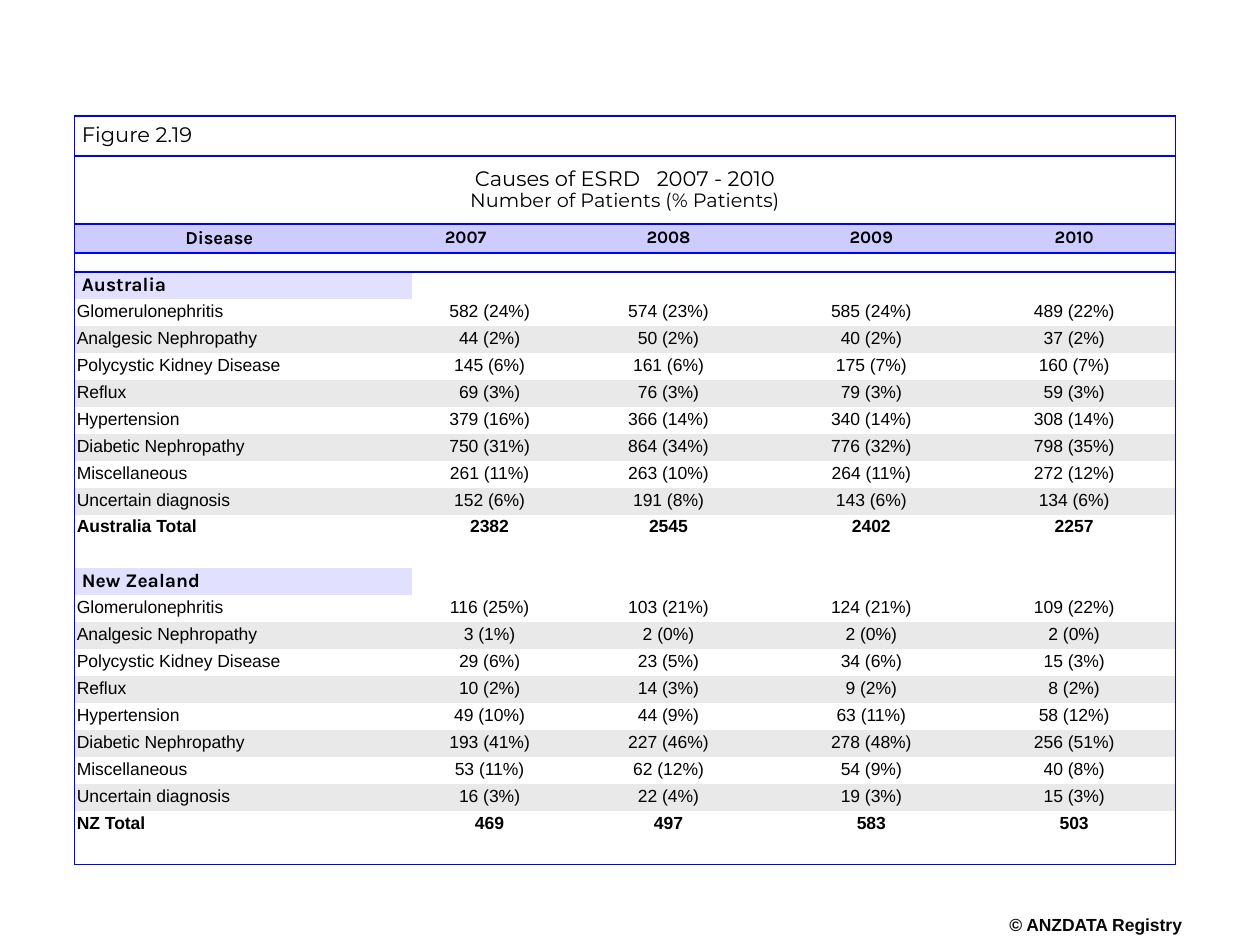
import pptx
import pptx.dml.color
import pptx.enum.text
import pptx.util
from lxml import etree
from pptx.oxml.ns import qn

Inches = pptx.util.Inches
Pt = pptx.util.Pt
ALIGN = pptx.enum.text.PP_ALIGN
ANCHOR = pptx.enum.text.MSO_ANCHOR

COLORS = {
    "border": "0000FF",
    "header": "CCCCFF",
    "country": "E1E1FF",
    "band": "E9E9E9",
    "text": "000000",
    "credit": "080808",
}
NO_STYLE = "{2D5ABB26-0587-4C30-8999-92F81FD0307C}"
COLUMN_WIDTHS = [2.3, 0.38, 1.23, 1.61, 1.61, 1.61]
TOP_HEIGHTS = [0.32, 0.54, 0.23, 0.15]
TABLE_HEIGHT = 5.95
ROW_COUNT = 26
RULED_ROWS = [0, 1, 2]
YEARS = ["2007", "2008", "2009", "2010"]
DISEASES = [
    "Glomerulonephritis", "Analgesic Nephropathy", "Polycystic Kidney Disease",
    "Reflux", "Hypertension", "Diabetic Nephropathy", "Miscellaneous",
    "Uncertain diagnosis",
]
# First table row, country, total label, one line per disease, totals
COUNTRIES = [
    (4, "Australia", "Australia Total", [
        ["582 (24%)", "574 (23%)", "585 (24%)", "489 (22%)"],
        ["44 (2%)", "50 (2%)", "40 (2%)", "37 (2%)"],
        ["145 (6%)", "161 (6%)", "175 (7%)", "160 (7%)"],
        ["69 (3%)", "76 (3%)", "79 (3%)", "59 (3%)"],
        ["379 (16%)", "366 (14%)", "340 (14%)", "308 (14%)"],
        ["750 (31%)", "864 (34%)", "776 (32%)", "798 (35%)"],
        ["261 (11%)", "263 (10%)", "264 (11%)", "272 (12%)"],
        ["152 (6%)", "191 (8%)", "143 (6%)", "134 (6%)"],
        ["2382", "2545", "2402", "2257"],
    ]),
    (15, "New Zealand", "NZ Total", [
        ["116 (25%)", "103 (21%)", "124 (21%)", "109 (22%)"],
        ["3 (1%)", "2 (0%)", "2 (0%)", "2 (0%)"],
        ["29 (6%)", "23 (5%)", "34 (6%)", "15 (3%)"],
        ["10 (2%)", "14 (3%)", "9 (2%)", "8 (2%)"],
        ["49 (10%)", "44 (9%)", "63 (11%)", "58 (12%)"],
        ["193 (41%)", "227 (46%)", "278 (48%)", "256 (51%)"],
        ["53 (11%)", "62 (12%)", "54 (9%)", "40 (8%)"],
        ["16 (3%)", "22 (4%)", "19 (3%)", "15 (3%)"],
        ["469", "497", "583", "503"],
    ]),
]


class SlideBuilder:
    def __init__(self, slide):
        self.slide = slide

    def run(self, paragraph, text, size=10, font="Arial", bold=False, color="text"):
        run = paragraph.add_run()
        run.text = text
        run.font.size = Pt(size)
        run.font.name = font
        run.font.bold = bold
        run.font.color.rgb = pptx.dml.color.RGBColor.from_string(COLORS[color])
        return run

    def format_paragraph(self, paragraph, centered=True):
        paragraph.alignment = ALIGN.CENTER if centered else ALIGN.LEFT
        paragraph.line_spacing = 0.85

    def credit(self, text, left, top, width, height):
        box = self.slide.shapes.add_textbox(
            Inches(left), Inches(top), Inches(width), Inches(height))
        frame = box.text_frame
        frame.margin_left = frame.margin_right = 0
        frame.margin_top = frame.margin_bottom = 0
        frame.word_wrap = False
        self.format_paragraph(frame.paragraphs[0])
        self.run(frame.paragraphs[0], text, bold=True, color="credit")

    def table(self, left, top, widths, heights):
        """Add an unstyled table whose cells are empty and compact."""
        frame = self.slide.shapes.add_table(
            len(heights), len(widths), Inches(left), Inches(top),
            Inches(sum(widths)), Inches(sum(heights)))
        table = frame.table
        table.first_row = table.horz_banding = False
        next(frame.element.iter(qn("a:tableStyleId"))).text = NO_STYLE
        for column, width in zip(table.columns, widths):
            column.width = Inches(width)
        for row, height in zip(table.rows, heights):
            row.height = Inches(height)
        for cell in table.iter_cells():
            cell.margin_left = cell.margin_right = Inches(0.02)
            cell.margin_top = cell.margin_bottom = Inches(0.01)
            cell.vertical_anchor = ANCHOR.MIDDLE
            cell.fill.background()
            paragraph = cell.text_frame.paragraphs[0]
            etree.SubElement(paragraph._p, qn("a:endParaRPr"), sz="600")
        return table

    def cell(self, cell, text, centered=True, fill=None, **style):
        paragraph = cell.text_frame.paragraphs[0]
        self.format_paragraph(paragraph, centered)
        self.run(paragraph, text, **style)
        if fill:
            self.fill(cell, fill)

    def fill(self, cell, color):
        cell.fill.solid()
        cell.fill.fore_color.rgb = pptx.dml.color.RGBColor.from_string(COLORS[color])

    def borders(self, cell, sides):
        """Draw the given sides, listed in the order L, R, T, B."""
        properties = cell._tc.get_or_add_tcPr()
        for index, side in enumerate(sides):
            line = etree.Element(qn(f"a:ln{side}"), w=str(Pt(1)))
            solid = etree.SubElement(line, qn("a:solidFill"))
            etree.SubElement(solid, qn("a:srgbClr"), val=COLORS["border"])
            properties.insert(index, line)


def merge_cells(table):
    last_row = ROW_COUNT - 1
    for row in range(ROW_COUNT):
        if row in (0, 1, 3, 14):
            table.cell(row, 0).merge(table.cell(row, 5))
        elif row == 2:
            table.cell(row, 1).merge(table.cell(row, 2))
        elif row <= last_row:
            table.cell(row, 0).merge(table.cell(row, 1))
    table.cell(4, 2).merge(table.cell(4, 5))


def fill_headings(builder, table):
    figure = table.cell(0, 0)
    figure.margin_left = Inches(0.06)
    builder.cell(figure, "Figure 2.19", centered=False, size=12, font="Montserrat")

    heading = table.cell(1, 0)
    builder.cell(heading, "Causes of ESRD", size=12, font="Montserrat")
    first = heading.text_frame.paragraphs[0]
    gap = builder.run(first, " ", size=12, font="Montserrat")
    gap.font._element.set("spc", "630")
    builder.run(first, "2007 - 2010", size=12, font="Montserrat")
    second = heading.text_frame.add_paragraph()
    builder.format_paragraph(second)
    builder.run(second, "Number of Patients (% Patients)", size=11, font="Montserrat")

    builder.cell(table.cell(2, 0), "Disease", fill="header", size=10.5,
                 font="Karla", bold=True)
    for column, year in zip([1, 3, 4, 5], YEARS):
        builder.cell(table.cell(2, column), year, fill="header",
                     font="Karla", bold=True)


def fill_country(builder, table, first_row, country, total, lines):
    title = table.cell(first_row, 0)
    title.margin_left = Inches(0.06)
    builder.cell(title, country, centered=False, fill="country", size=11,
                 font="Karla", bold=True)
    for index, (label, values) in enumerate(zip(DISEASES + [total], lines)):
        row = first_row + 1 + index
        style = {"fill": "band" if index % 2 else None, "bold": label == total}
        builder.cell(table.cell(row, 0), label, centered=False, **style)
        for column, value in enumerate(values, start=2):
            builder.cell(table.cell(row, column), value, **style)


def draw_borders(builder, table):
    for row in range(ROW_COUNT):
        for column in range(len(COLUMN_WIDTHS)):
            cell = table.cell(row, column)
            end = column + (cell.span_width if cell.is_merge_origin else 1)
            shown = {
                "L": column == 0,
                "R": end == len(COLUMN_WIDTHS),
                "T": row in RULED_ROWS or row - 1 in RULED_ROWS,
                "B": row in RULED_ROWS or row == ROW_COUNT - 1,
            }
            builder.borders(cell, [side for side in shown if shown[side]])


def main():
    presentation = pptx.Presentation()
    presentation.slide_width = Inches(10)
    presentation.slide_height = Inches(7.5)
    slide = presentation.slides.add_slide(presentation.slide_layouts[6])
    builder = SlideBuilder(slide)

    builder.credit("© ANZDATA Registry", 7.99, 7.28, 1.41, 0.17)
    body_count = ROW_COUNT - len(TOP_HEIGHTS)
    body_height = (TABLE_HEIGHT - sum(TOP_HEIGHTS)) / body_count
    table = builder.table(0.59, 0.92, COLUMN_WIDTHS,
                          TOP_HEIGHTS + [body_height] * body_count)
    merge_cells(table)
    fill_headings(builder, table)
    for country in COUNTRIES:
        fill_country(builder, table, *country)
    draw_borders(builder, table)
    presentation.save("out.pptx")


if __name__ == "__main__":
    main()
